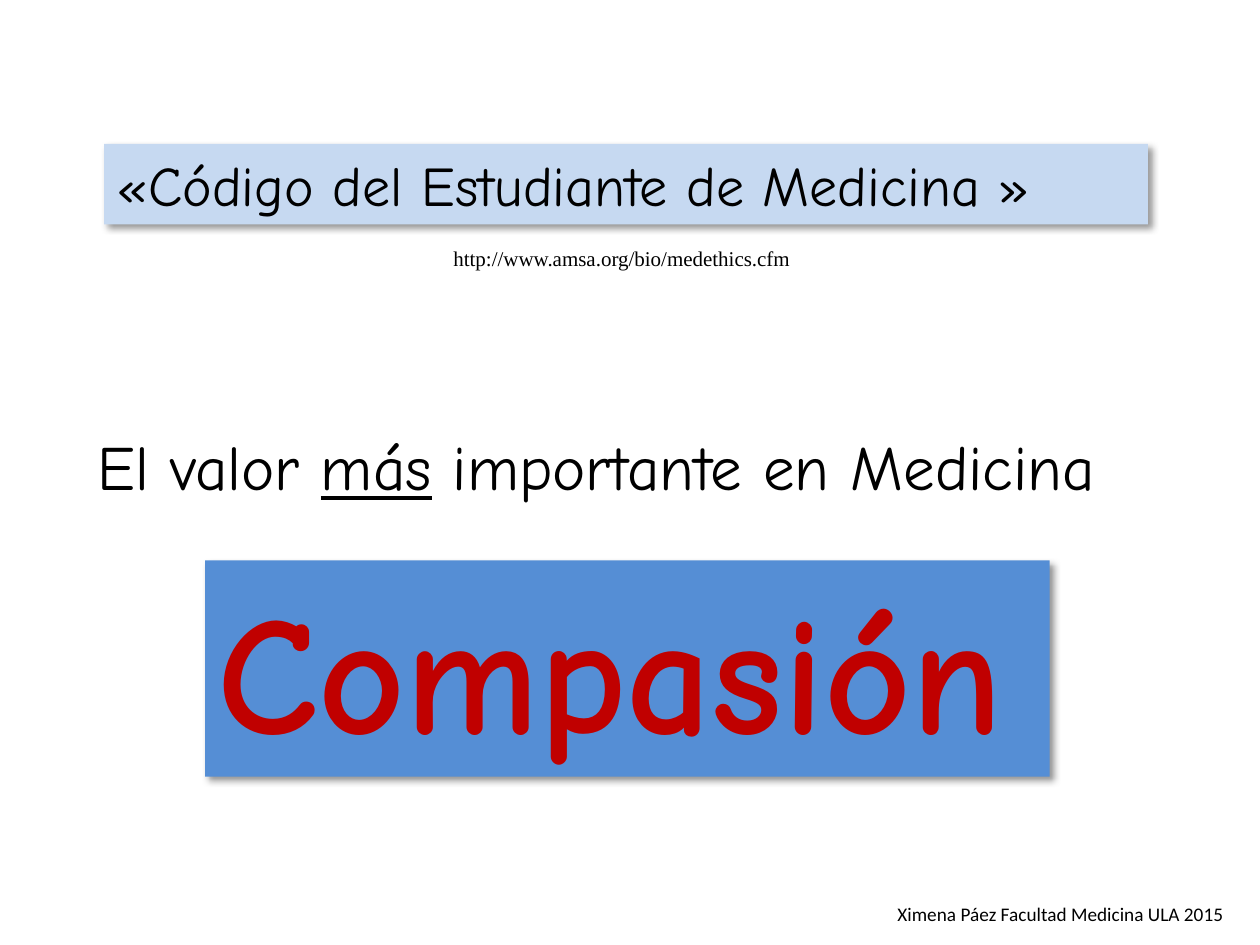
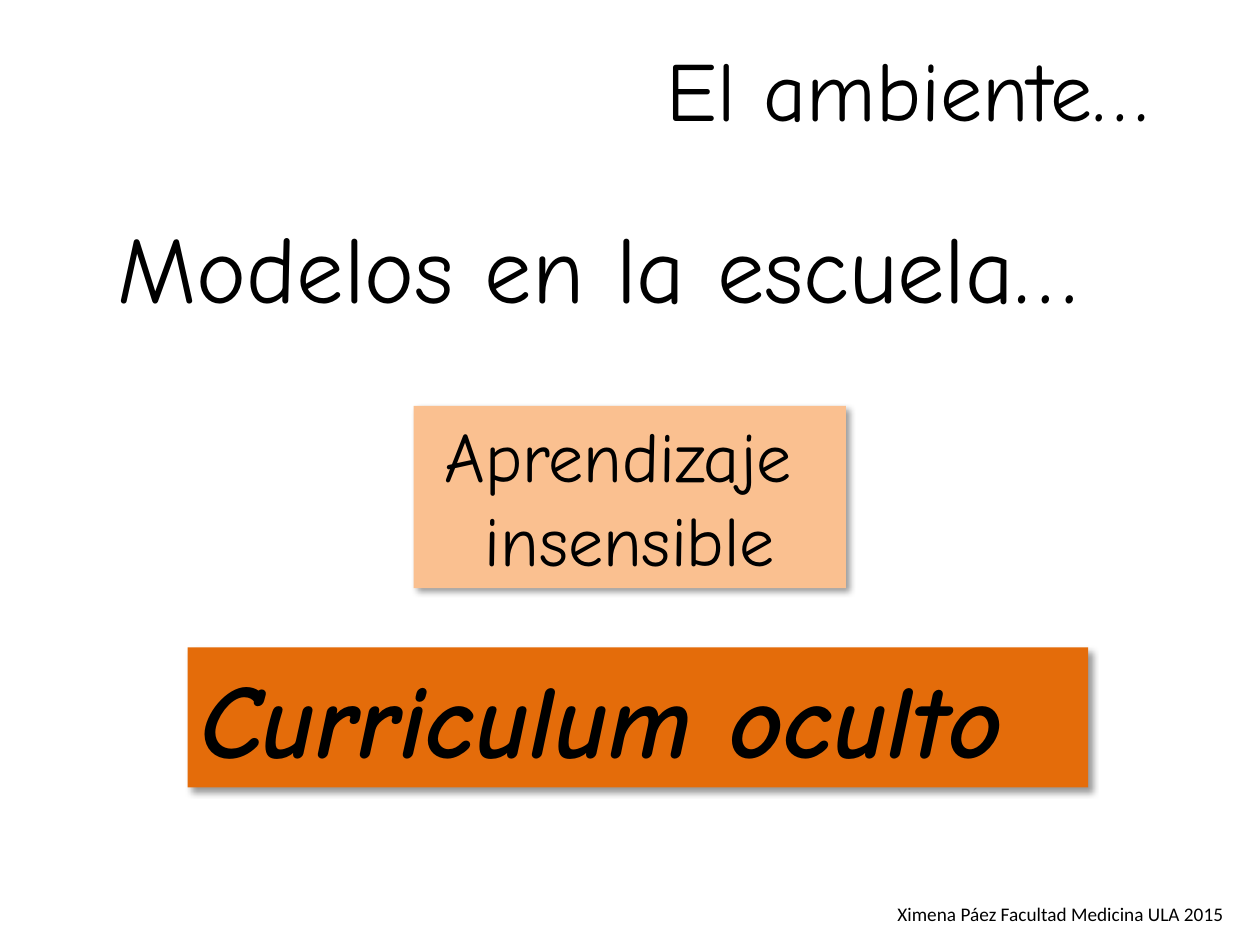
from dataclasses import dataclass
from typing import NamedTuple

from lxml import etree
from pptx import Presentation
from pptx.dml.color import RGBColor
from pptx.enum.text import MSO_ANCHOR, MSO_AUTO_SIZE, PP_ALIGN
from pptx.oxml.ns import qn
from pptx.util import Pt

LEFT, CENTER, RIGHT = PP_ALIGN.LEFT, PP_ALIGN.CENTER, PP_ALIGN.RIGHT
TOP = MSO_ANCHOR.TOP
NO_AUTOFIT = MSO_AUTO_SIZE.NONE
TITLE_ONLY = 5


class Box(NamedTuple):
    left: float
    top: float
    width: float
    height: float


@dataclass(frozen=True)
class Theme:
    text: str = "000000"
    accent: str = "C00000"
    pale_blue: str = "C6D9F1"
    blue: str = "558ED5"
    peach: str = "FAC090"
    orange: str = "E46C0A"
    hand_font: str = "Comic Neue"
    link_font: str = "Times New Roman"
    footer_font: str = "Calibri"
    footer_size: int = 11
    link_size: int = 12
    banner_size: int = 32
    statement_size: int = 36
    note_size: int = 40
    heading_size: int = 48
    subheading_size: int = 54
    conclusion_size: int = 60
    value_size: int = 96


THEME = Theme()
FOOTER_BOX = Box(504, 511.9, 202.3, 20.9)


def place(shape, box):
    shape.left, shape.top, shape.width, shape.height = map(Pt, box)


def add_text_box(slide, box):
    return slide.shapes.add_textbox(*map(Pt, box))


def write(shape, lines, size, font=THEME.hand_font, color=THEME.text,
          align=LEFT, bold=False, italic=False, wrap=True):
    frame = shape.text_frame
    frame.text = "\n".join(lines)
    frame.word_wrap = wrap
    frame.auto_size = NO_AUTOFIT
    frame.vertical_anchor = TOP
    for paragraph in frame.paragraphs:
        paragraph.alignment = align
        paragraph.font.name = font
        paragraph.font.size = Pt(size)
        paragraph.font.bold = bold
        paragraph.font.italic = italic
        paragraph.font.color.rgb = RGBColor.from_string(color)


def make_panel(shape, color):
    shape.fill.solid()
    shape.fill.fore_color.rgb = RGBColor.from_string(color)
    effects = etree.SubElement(shape.fill._xPr, qn("a:effectLst"))
    shadow = etree.SubElement(
        effects, qn("a:outerShdw"), blurRad=str(Pt(4)), dist=str(Pt(3)),
        dir=str(45 * 60000), algn="tl", rotWithShape="0")
    shadow_color = etree.SubElement(shadow, qn("a:srgbClr"), val=THEME.text)
    etree.SubElement(shadow_color, qn("a:alpha"), val="40000")


def add_title(slide, box, text, size, fill=None):
    title = slide.shapes.title
    place(title, box)
    write(title, [text], size)
    if fill:
        make_panel(title, fill)


def add_panel(slide, box, lines, size, fill, **style):
    panel = add_text_box(slide, box)
    make_panel(panel, fill)
    write(panel, lines, size, **style)


def add_statement(slide, box, before, stressed, after):
    statement = add_text_box(slide, box)
    write(statement, [before], THEME.statement_size)
    paragraph = statement.text_frame.paragraphs[0]
    stressed_run = paragraph.add_run()
    stressed_run.text = stressed
    stressed_run.font.underline = True
    paragraph.add_run().text = after


def add_footer(slide, box):
    write(add_text_box(slide, box), ["Ximena Páez Facultad Medicina ULA 2015"],
          THEME.footer_size, THEME.footer_font, align=RIGHT, wrap=False)


def add_slide(presentation):
    slide = presentation.slides.add_slide(presentation.slide_layouts[TITLE_ONLY])
    add_footer(slide, FOOTER_BOX)
    return slide


def build_value_slide(presentation):
    slide = add_slide(presentation)
    add_title(slide, Box(59.5, 82.2, 596.5, 46), "«Código del Estudiante de Medicina »",
              THEME.banner_size, THEME.pale_blue)
    link = add_text_box(slide, Box(252, 137, 210.2, 21.8))
    write(link, ["http://www.amsa.org/bio/medethics.cfm"], THEME.link_size, THEME.link_font)
    add_statement(slide, Box(48.5, 240.5, 624, 51), "El valor ", "más", " importante en Medicina")
    add_panel(slide, Box(117.2, 320.3, 482.6, 123.6), ["Compasión"], THEME.value_size,
              THEME.blue, color=THEME.accent, bold=True)


def build_environment_slide(presentation):
    slide = add_slide(presentation)
    add_title(slide, Box(373.7, 18, 312, 65.5), "El ambiente…", THEME.heading_size)
    subheading = add_text_box(slide, Box(60, 116, 600, 72.7))
    write(subheading, ["Modelos en la escuela…"], THEME.subheading_size)
    add_panel(slide, Box(236.4, 232, 247, 104.2), ["Aprendizaje ", "insensible"],
              THEME.note_size, THEME.peach, align=CENTER)
    add_panel(slide, Box(107.3, 370, 514.6, 80), ["Curriculum oculto"],
              THEME.conclusion_size, THEME.orange, bold=True, italic=True)


def main():
    presentation = Presentation()
    presentation.slide_width, presentation.slide_height = Pt(720), Pt(540)
    build_value_slide(presentation)
    build_environment_slide(presentation)
    presentation.save("out.pptx")


if __name__ == "__main__":
    main()
